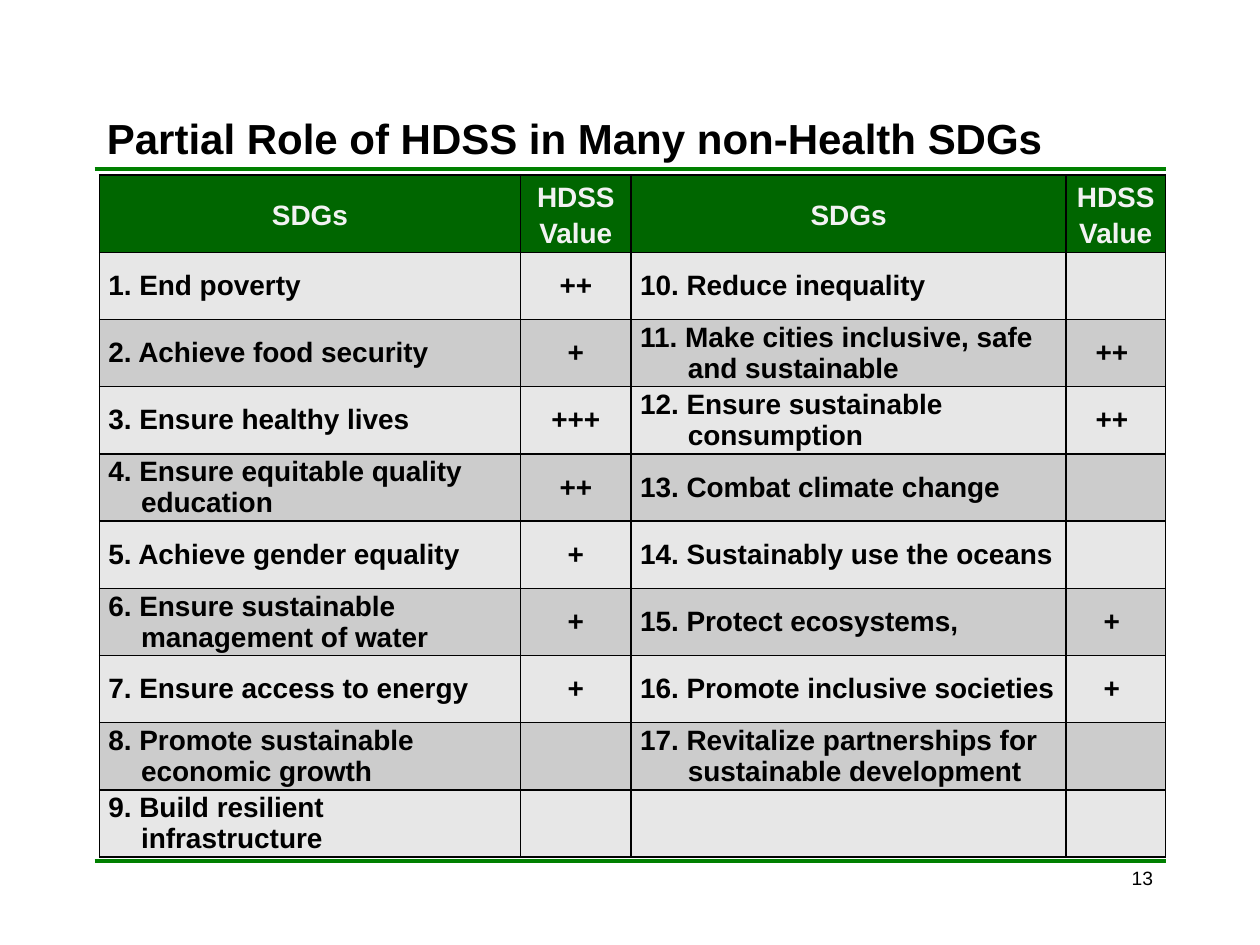
"""Build a slide with a table of HDSS value for each SDG."""
from lxml import etree
from pptx import Presentation
from pptx.dml.color import RGBColor
from pptx.enum.shapes import MSO_CONNECTOR
from pptx.enum.text import MSO_ANCHOR, PP_ALIGN
from pptx.oxml import parse_xml
from pptx.oxml.ns import qn
from pptx.util import Inches, Pt

LEFT, MID, RIGHT = PP_ALIGN.LEFT, PP_ALIGN.CENTER, PP_ALIGN.RIGHT
TOP, CENTER, BASE = MSO_ANCHOR.TOP, MSO_ANCHOR.MIDDLE, MSO_ANCHOR.BOTTOM
LINE = MSO_CONNECTOR.STRAIGHT
SPACE = "http://schemas.openxmlformats.org/drawingml/2006/main"


def hue(code):
    return RGBColor.from_string(code)


def write(frame, text, size=16, bold=True, color="000000", align=LEFT, gap=None, hang=0):
    frame.word_wrap = True
    para = frame.paragraphs[0]
    para.alignment = align
    para.line_spacing = gap
    if hang:
        props = para._p.get_or_add_pPr()
        props.set("marL", str(hang))
        props.set("indent", str(-hang))
    run = para.add_run()
    run.text = text
    run.font.name = "Arial"
    run.font.size = Pt(size)
    run.font.bold = bold
    run.font.color.rgb = hue(color)


deck = Presentation()
deck.slide_width, deck.slide_height = Inches(10), Inches(7.5)
unit = deck.slide_width // 1000
slide = deck.slides.add_slide(deck.slide_layouts[6])
shapes = slide.shapes

for level in (683, 134):
    rule = shapes.add_connector(LINE, 75 * unit, level * unit, 925 * unit, level * unit)
    rule.line.color.rgb = hue("008000")
    rule.line.width = Pt(2.25)
    etree.SubElement(rule._element.spPr, qn("a:effectLst"))

title = shapes.add_textbox(75 * unit, 42 * unit, 850 * unit, 92 * unit).text_frame
title.vertical_anchor = BASE
write(title, "Partial Role of HDSS in Many non-Health SDGs", size=24)

page = shapes.add_textbox(717 * unit, 683 * unit, 208 * unit, 50 * unit).text_frame
page.vertical_anchor = TOP
write(page, "13", size=11, bold=False, align=RIGHT)

rows = [
    ("SDGs", "HDSS Value", "SDGs", "HDSS Value"),
    ("1. End poverty", "++", "10. Reduce inequality", ""),
    ("2. Achieve food security", "+", "11. Make cities inclusive, safe and sustainable", "++ "),
    ("3. Ensure healthy lives", "+++", "12. Ensure sustainable consumption", "++ "),
    ("4. Ensure equitable quality education", "++", "13. Combat climate change", ""),
    ("5. Achieve gender equality", "+", "14. Sustainably use the oceans", ""),
    ("6. Ensure sustainable management of water", "+", "15. Protect ecosystems,", "+ "),
    ("7. Ensure access to energy", "+", "16. Promote inclusive societies", "+ "),
    ("8. Promote sustainable economic growth", "",
     "17. Revitalize partnerships for sustainable development", ""),
    ("9. Build resilient infrastructure", "", "", ""),
]
wides = (334, 88, 345, 79)
hangs = (26, 0, 38, 0)
head, step = 57, 53.3
tall = head + step * (len(rows) - 1)

table = shapes.add_table(len(rows), len(wides), 79 * unit, 139 * unit,
                         sum(wides) * unit, int(tall * unit)).table
table.horz_banding = False
for col, wide in zip(table.columns, wides):
    col.width = wide * unit

for r, row in enumerate(rows):
    table.rows[r].height = int((step if r else head) * unit)
    shade = ("CCCCCC", "E7E7E7")[r % 2] if r else "006600"
    for c, text in enumerate(row):
        cell = table.cell(r, c)
        cell.vertical_anchor = CENTER
        cell.margin_left = cell.margin_right = 7 * unit
        cell.margin_top = cell.margin_bottom = 0
        for side in "LRTB":
            cell._tc.get_or_add_tcPr().append(parse_xml(
                f'<a:ln{side} xmlns:a="{SPACE}" w="{Pt(1)}"><a:solidFill>'
                f'<a:srgbClr val="000000"/></a:solidFill></a:ln{side}>'))
        cell.fill.solid()
        cell.fill.fore_color.rgb = hue(shade)
        if text and r == 0:
            write(cell.text_frame, text, color="F2F2F2", align=MID, gap=1.15)
        elif text:
            write(cell.text_frame, text, align=MID if c % 2 else LEFT, hang=hangs[c] * unit)

deck.save("out.pptx")
